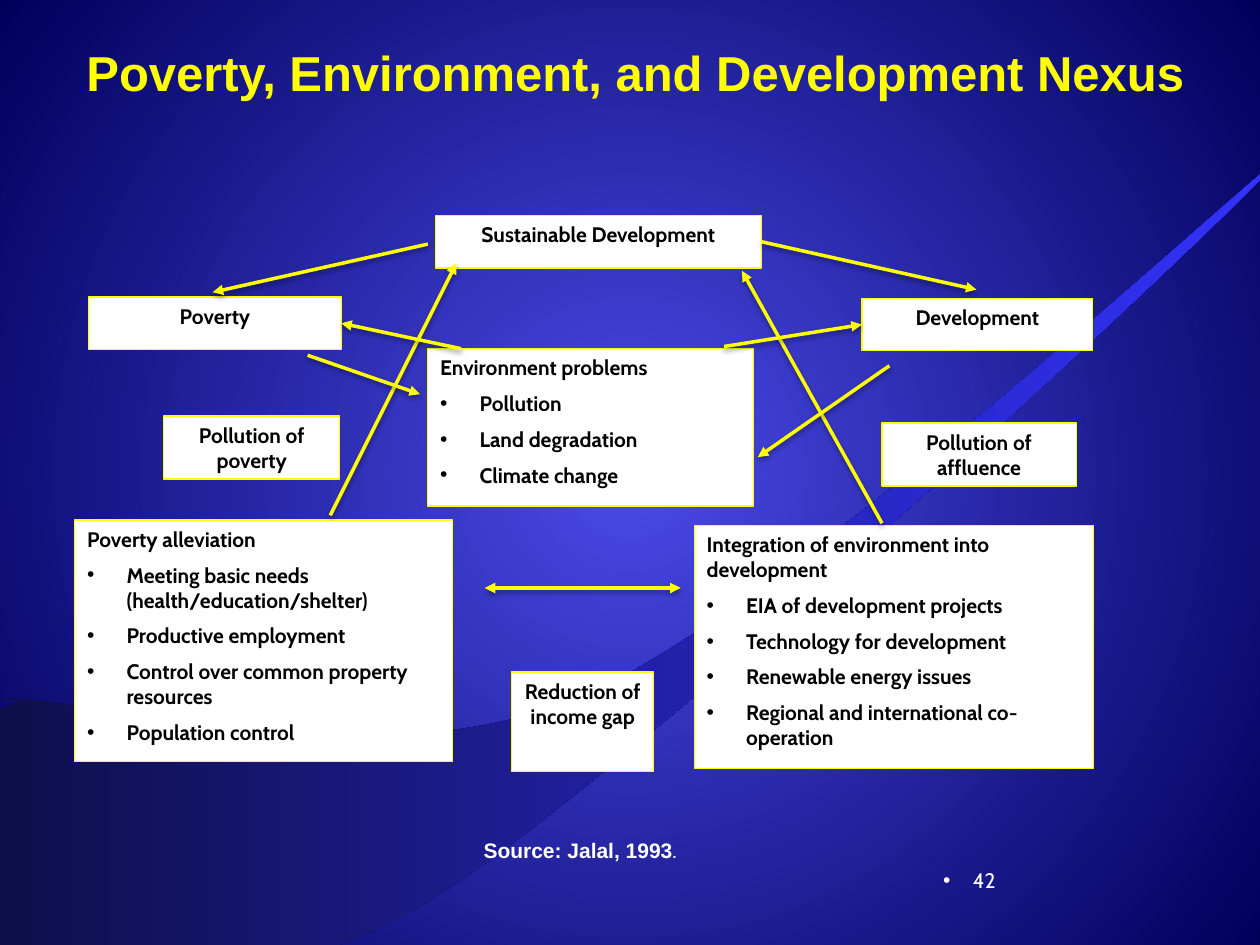
from lxml import etree
from pptx import Presentation
from pptx.dml.color import RGBColor
from pptx.enum.shapes import MSO_CONNECTOR, MSO_SHAPE
from pptx.enum.text import MSO_ANCHOR, MSO_AUTO_SIZE, PP_ALIGN
from pptx.oxml import parse_xml
from pptx.oxml.ns import nsdecls, qn
from pptx.util import Pt

RECT, STRAIGHT = MSO_SHAPE.RECTANGLE, MSO_CONNECTOR.STRAIGHT
LEFT, CENTER, RIGHT = PP_ALIGN.LEFT, PP_ALIGN.CENTER, PP_ALIGN.RIGHT
TOP, GROW, FIXED = MSO_ANCHOR.TOP, MSO_AUTO_SIZE.SHAPE_TO_FIT_TEXT, MSO_AUTO_SIZE.NONE

COLORS = {"accent": "FFFF00", "white": "FFFFFF", "black": "000000",
          "glow": "4A4AE9", "night": "00005B", "wave": "3333FF"}
BODY = {"name": "Cabin", "size": 12, "bold": True, "color": "black"}
TITLE = {"name": "Arial", "size": 28, "bold": True, "color": "accent"}
SOURCE = {"name": "Arial", "size": 12, "bold": True, "color": "white"}
NUMBER = {"name": "Cabin", "size": 12, "bold": False, "color": "white"}

WAVE_START = (-2, 547)
WAVE_CURVES = [
    ((40, 542), (127, 588), (248, 513)), ((369, 438), (712, 115), (726, 96)),
    ((740, 77), (453, 348), (332, 398)), ((211, 449), (53, 398), (-1, 399)),
    ((-54, 400), (12, 399), (11.5, 400)), ((11.5, 401), (1, 405), (-2, 406)),
    ((-2, 406), (-2, 547), (-2, 547)),
]

BOXES = {
    "goal": ((249, 123, 186, 30.25), "Sustainable Development", []),
    "development": ((492.5, 170.5, 132, 30), "Development", []),
    "poverty": ((50.75, 169.75, 144.25, 30), "Poverty", []),
    "poor pollution": ((93.5, 237.75, 100.75, 36), "Pollution of poverty", []),
    "rich pollution": ((504, 241.75, 111, 36), "Pollution of affluence", []),
    "problems": ((244.5, 199.25, 186, 90), "Environment problems",
                 ["Pollution", "Land degradation", "Climate change"]),
    "income gap": ((292.5, 384, 81, 57), "Reduction of income gap", []),
    "alleviation": ((42.75, 297.25, 216, 138), "Poverty alleviation",
                    ["Meeting basic needs (health/education/shelter)", "Productive employment",
                     "Control over common property resources", "Population control"]),
    "integration": ((396.75, 300.25, 228, 139), "Integration of environment into development",
                    ["EIA of development projects", "Technology for development",
                     "Renewable energy issues", "Regional and international co-operation"]),
}

ARROWS = [
    {"ends": ((244.5, 139.5), (121.5, 167))},
    {"ends": ((435, 138), (558, 165.5)), "begin": ("goal", 3)},
    {"ends": ((504, 299), (424, 154.75))},
    {"ends": ((413.75, 198), (492.5, 185.5)), "end": ("development", 1)},
    {"ends": ((508.25, 209), (433, 261.25))},
    {"ends": ((188.75, 294.5), (260.75, 150.5))},
    {"ends": ((263.5, 199.25), (195, 184.75)), "end": ("poverty", 3)},
    {"ends": ((175.75, 203), (240, 225.25))},
    {"ends": ((277, 336), (389, 336)), "double": True},
]


def rgb(name):
    return RGBColor.from_string(COLORS[name])


def add_gradient(fill, names):
    fill.gradient()
    for stop, name in zip(fill.gradient_stops, names):
        stop.color.rgb = rgb(name)


def add_run(paragraph, text, style):
    run = paragraph.add_run()
    run.text = text
    values = {**style, "size": Pt(style["size"])}
    run.font.color.rgb = rgb(values.pop("color"))
    for key, value in values.items():
        setattr(run.font, key, value)


def add_bullet(paragraph, indent):
    props = paragraph._p.get_or_add_pPr()
    props.set("marL", str(Pt(indent)))
    props.set("indent", str(-Pt(indent)))
    etree.SubElement(props, qn("a:buFont"), typeface="Arial")
    etree.SubElement(props, qn("a:buChar"), char="•")


def format_frame(frame, autosize):
    for key, value in {"word_wrap": True, "vertical_anchor": TOP, "auto_size": autosize}.items():
        setattr(frame, key, value)


def add_label(shapes, place, runs, align, autosize):
    label = shapes.add_textbox(*map(Pt, place))
    format_frame(label.text_frame, autosize)
    paragraph = label.text_frame.paragraphs[0]
    paragraph.alignment = align
    for text, style in runs:
        add_run(paragraph, text, style)
    return paragraph


def add_box(shapes, place, heading, points):
    box = shapes.add_shape(RECT, *map(Pt, place))
    box.shadow.inherit = False
    box.fill.solid()
    box.fill.fore_color.rgb = rgb("white")
    box.line.color.rgb = rgb("accent")
    box.line.width = Pt(0.75)
    frame = box.text_frame
    format_frame(frame, FIXED)
    frame.paragraphs[0].alignment = LEFT if points else CENTER
    add_run(frame.paragraphs[0], heading, BODY)
    for point in points:
        paragraph = frame.add_paragraph()
        add_bullet(paragraph, 22.5)
        paragraph.alignment = LEFT
        paragraph.space_before = Pt(6)
        add_run(paragraph, point, BODY)
    return box


def add_arrow(shapes, boxes, ends, begin=None, end=None, double=False):
    arrow = shapes.add_connector(STRAIGHT, *(Pt(value) for point in ends for value in point))
    if begin:
        arrow.begin_connect(boxes[begin[0]], begin[1])
    if end:
        arrow.end_connect(boxes[end[0]], end[1])
    arrow.line.color.rgb = rgb("accent")
    arrow.line.width = Pt(2)
    for tag in ("a:headEnd", "a:tailEnd") if double else ("a:tailEnd",):
        etree.SubElement(arrow.line._get_or_add_ln(), qn(tag), type="triangle")
    arrow._element.spPr.append(parse_xml(
        f'<a:effectLst {nsdecls("a")}><a:outerShdw blurRad="{Pt(3.1)}" dist="{Pt(1.6)}" '
        f'dir="5400000" rotWithShape="0"><a:srgbClr val="{COLORS["black"]}">'
        '<a:alpha val="38000"/></a:srgbClr></a:outerShdw></a:effectLst>'))


def bend_segments(outline):
    segments = list(outline.iter(qn("a:lnTo")))
    for first in range(0, len(segments), 3):
        curve = etree.Element(qn("a:cubicBezTo"))
        segments[first].addprevious(curve)
        for segment in segments[first:first + 3]:
            curve.append(segment[0])
            segment.getparent().remove(segment)


def add_wave(shapes):
    builder = shapes.build_freeform(*map(Pt, WAVE_START))
    builder.add_line_segments([tuple(map(Pt, point)) for curve in WAVE_CURVES for point in curve],
                              close=True)
    wave = builder.convert_to_shape()
    bend_segments(wave._element)
    wave.shadow.inherit = False
    add_gradient(wave.fill, ("wave", "wave"))
    wave.fill.gradient_angle = 0
    dark = wave._element.spPr.find(".//" + qn("a:srgbClr"))
    for tag, values in (("gamma", {}), ("shade", {"val": "24314"}), ("invGamma", {})):
        etree.SubElement(dark, qn("a:" + tag), values)
    wave.line.fill.background()


def set_background(slide):
    add_gradient(slide.background.fill, ("glow", "night"))
    gradient = slide._element.find(".//" + qn("a:gradFill"))
    gradient.remove(gradient.find(qn("a:lin")))
    radial = etree.SubElement(gradient, qn("a:path"), {"path": "circle"})
    etree.SubElement(radial, qn("a:fillToRect"), dict.fromkeys("ltrb", "50000"))


def main():
    deck = Presentation()
    deck.slide_width, deck.slide_height = Pt(720), Pt(540)
    slide = deck.slides.add_slide(deck.slide_layouts[6])
    shapes = slide.shapes
    set_background(slide)
    add_wave(shapes)
    number = add_label(shapes, (486, 492, 90, 36), [("42", NUMBER)], RIGHT, FIXED)
    add_bullet(number, 17)
    add_label(shapes, (24, 21, 678, 41), [("Poverty, Environment, and Development Nexus", TITLE)],
              CENTER, GROW)
    boxes = {name: add_box(shapes, *content) for name, content in BOXES.items()}
    for arrow in ARROWS:
        add_arrow(shapes, boxes, **arrow)
    add_label(shapes, (258.5, 475, 146, 22),
              [("Source: Jalal, 1993", SOURCE), (".", {**SOURCE, "size": 8})], CENTER, GROW)
    deck.save("out.pptx")


if __name__ == "__main__":
    main()
